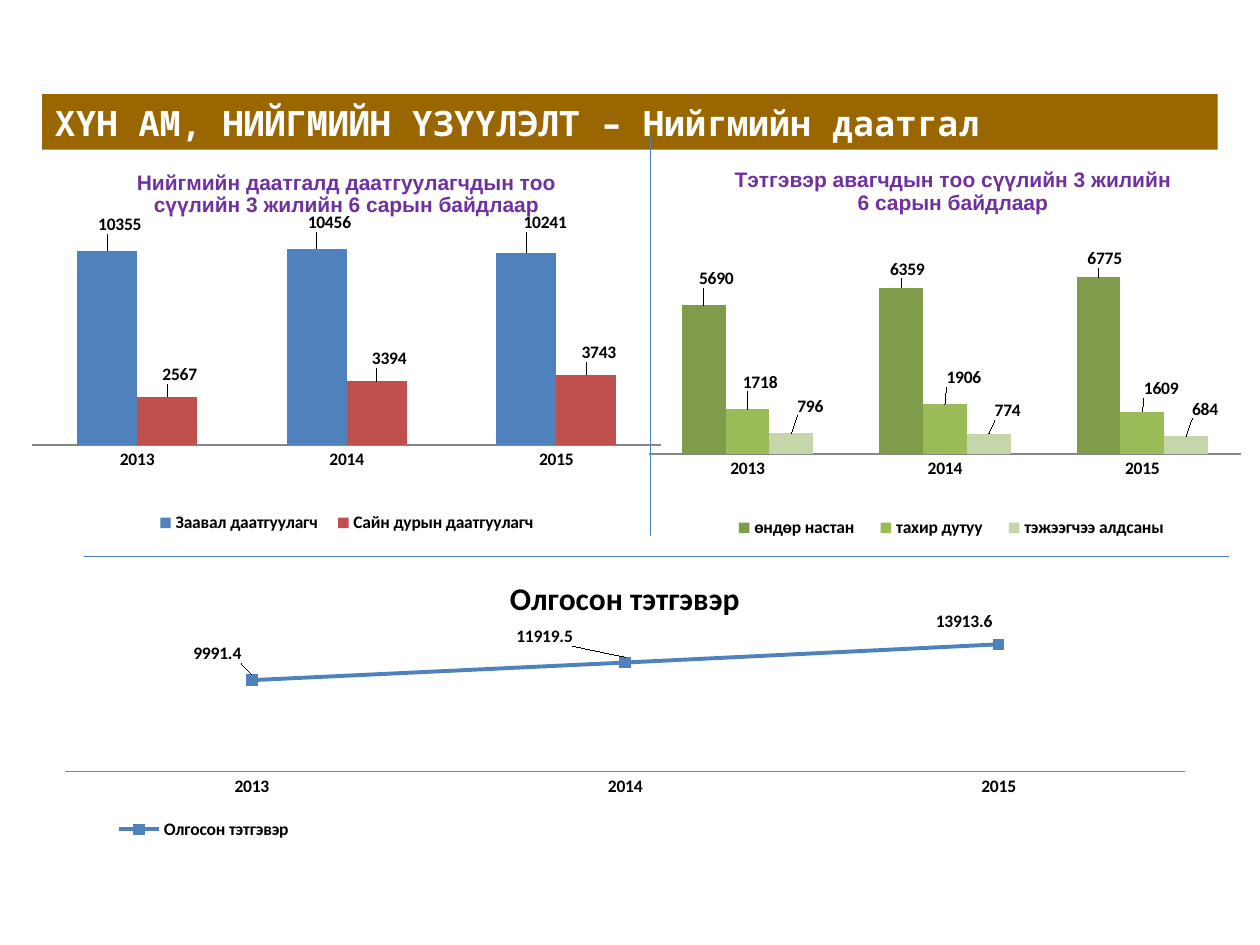
"""Build the social insurance slide with two column charts and a line chart."""
from pptx import Presentation
from pptx.chart.data import CategoryChartData
from pptx.dml.color import RGBColor
from pptx.enum.chart import XL_CHART_TYPE as ChartType
from pptx.enum.chart import XL_LABEL_POSITION as LabelPosition
from pptx.enum.chart import XL_LEGEND_POSITION as LegendPosition
from pptx.enum.chart import XL_MARKER_STYLE as MarkerStyle
from pptx.enum.chart import XL_TICK_MARK as TickMark
from pptx.enum.shapes import MSO_CONNECTOR as Connector
from pptx.enum.shapes import MSO_SHAPE as Shape
from pptx.enum.text import MSO_ANCHOR as Anchor
from pptx.enum.text import PP_ALIGN as Align
from pptx.oxml import parse_xml
from pptx.oxml.ns import nsdecls, qn
from pptx.util import Cm, Pt

BROWN = RGBColor(0x99, 0x66, 0x00)
WHITE = RGBColor(0xFF, 0xFF, 0xFF)
BLACK = RGBColor(0x00, 0x00, 0x00)
GREY = RGBColor(0x86, 0x86, 0x86)
PURPLE = RGBColor(0x70, 0x30, 0xA0)
RULE_BLUE = RGBColor(0x4B, 0x7E, 0xBC)
BLUE = RGBColor(0x4F, 0x81, 0xBD)
RED = RGBColor(0xC0, 0x50, 0x4D)
DARK_GREEN = RGBColor(0x80, 0x9B, 0x4A)
GREEN = RGBColor(0x9B, 0xBB, 0x59)
PALE_GREEN = RGBColor(0xC5, 0xD6, 0xAB)
YEARS = ["2013", "2014", "2015"]


def set_layout(element, index, values, edge=True, inner=False):
    for layout in element.findall(qn("c:layout")):
        element.remove(layout)
    target = '<c:layoutTarget val="inner"/>' if inner else ""
    modes = '<c:xMode val="edge"/><c:yMode val="edge"/>' if edge else ""
    numbers = "".join(f'<c:{name} val="{value}"/>' for name, value in zip("xywh", values))
    element.insert(index, parse_xml(
        f'<c:layout {nsdecls("c")}><c:manualLayout>{target}{modes}{numbers}'
        "</c:manualLayout></c:layout>"))


class SlideBuilder:
    def __init__(self, slide):
        self.slide = slide
        self.font = "Calibri"
        self.size = Pt(10)

    def style(self, font, size, color, name=None):
        font.name = name or self.font
        font.size = size
        font.bold = True
        font.color.rgb = color

    def banner(self, text, *box):
        shape = self.slide.shapes.add_shape(Shape.RECTANGLE, *map(Cm, box))
        shape.shadow.inherit = False
        shape.fill.solid()
        shape.fill.fore_color.rgb = BROWN
        shape.line.fill.background()
        frame = shape.text_frame
        frame.word_wrap = True
        frame.vertical_anchor = Anchor.MIDDLE
        frame.text = text
        paragraph = frame.paragraphs[0]
        paragraph.alignment = Align.JUSTIFY
        properties = paragraph._p.get_or_add_pPr()
        properties.set("marL", str(Cm(1.42)))
        properties.set("indent", str(Cm(-1.42)))
        self.style(paragraph.runs[0].font, Pt(20), WHITE, "Noto Sans Mono")

    def rule(self, *ends):
        line = self.slide.shapes.add_connector(Connector.STRAIGHT, *map(Cm, ends))
        line.line.color.rgb = RULE_BLUE
        line.line.width = Pt(0.75)
        line._element.spPr.append(parse_xml(f'<a:effectLst {nsdecls("a")}/>'))

    def chart(self, kind, box, series, maximum, plot, legend, axis_width):
        data = CategoryChartData()
        data.categories = YEARS
        for name, values, _, _ in series:
            data.add_series(name, values)
        chart = self.slide.shapes.add_chart(kind, *map(Cm, box), data).chart
        chart.font.name = self.font
        chart.font.size = self.size
        chart.font.color.rgb = BLACK
        space = chart._chartSpace
        space.find(qn("c:chart")).addnext(parse_xml(
            f'<c:spPr {nsdecls("c", "a")}><a:noFill/><a:ln><a:noFill/></a:ln></c:spPr>'))
        set_layout(next(space.iter(qn("c:plotArea"))), 0, plot, inner=True)

        chart.has_legend = True
        chart.legend.position = LegendPosition.TOP
        chart.legend.include_in_layout = False
        self.style(chart.legend.font, self.size, BLACK)
        set_layout(chart.legend._element, 1, legend)

        values_axis = chart.value_axis
        values_axis.visible = False
        values_axis.has_major_gridlines = False
        values_axis.minimum_scale = 0
        values_axis.maximum_scale = maximum
        years_axis = chart.category_axis
        years_axis.major_tick_mark = TickMark.NONE
        years_axis.format.line.color.rgb = GREY
        years_axis.format.line.width = Pt(axis_width)
        self.style(years_axis.tick_labels.font, self.size, BLACK)
        chart.plots[0].vary_by_categories = False
        for item, (_, _, color, offsets) in zip(chart.plots[0].series, series):
            self.labels(item, offsets, kind)
            if kind == ChartType.COLUMN_CLUSTERED:
                item.format.fill.solid()
                item.format.fill.fore_color.rgb = color
            else:
                self.line_series(item, color)
        return chart

    def labels(self, series, offsets, kind):
        is_column = kind == ChartType.COLUMN_CLUSTERED
        position = LabelPosition.OUTSIDE_END if is_column else LabelPosition.ABOVE
        series.data_labels.show_value = True
        series.data_labels.position = position
        self.style(series.data_labels.font, self.size, BLACK)
        for index in range(len(offsets)):
            label = series.points[index].data_label
            label.position = position
            self.style(label.font, self.size, BLACK)
        for element, offset in zip(series._element.iter(qn("c:dLbl")), offsets):
            set_layout(element, 1, offset, edge=False)

    def line_series(self, series, color):
        series.smooth = False
        series.format.line.color.rgb = color
        series.format.line.width = Pt(2.25)
        series.marker.style = MarkerStyle.SQUARE
        series.marker.size = 6
        series.marker.format.fill.solid()
        series.marker.format.fill.fore_color.rgb = color
        series.marker.format.line.color.rgb = color

    def chart_title(self, chart, text, place, size=12, color=PURPLE, font="Arial"):
        title = chart.chart_title
        title.text_frame.text = text
        for paragraph in title.text_frame.paragraphs:
            self.style(paragraph.runs[0].font, Pt(size), color, font)
        title.include_in_layout = False
        set_layout(title._element, 1, place)


def main():
    presentation = Presentation()
    presentation.slide_width = Cm(25.4)
    presentation.slide_height = Cm(19.05)
    builder = SlideBuilder(presentation.slides.add_slide(presentation.slide_layouts[6]))

    builder.banner("ХҮН АМ, НИЙГМИЙН ҮЗҮҮЛЭЛТ – Нийгмийн даатгал", 0.85, 1.9, 23.7, 1.12)
    builder.rule(13.12, 2.75, 13.12, 10.8)
    builder.rule(1.69, 11.22, 24.77, 11.22)

    insured = builder.chart(
        ChartType.COLUMN_CLUSTERED, (0.64, 3.18, 12.7, 7.83),
        [("Заавал даатгуулагч", (10355, 10456, 10241), BLUE,
          [(0.02, -0.03), (0.02, -0.03), (0.03, -0.04)]),
         ("Сайн дурын даатгуулагч", (2567, 3394, 3743), RED, [(0.02, -0.02)] * 3)],
        12000, (0, 0.16, 1, 0.58), (0.18, 0.9, 0.64, 0.08), 0.75)
    builder.chart_title(
        insured, "Нийгмийн даатгалд даатгуулагчдын тоо сүүлийн 3 жилийн 6 сарын байдлаар",
        (0.16, 0.02))

    pensioners = builder.chart(
        ChartType.COLUMN_CLUSTERED, (12.7, 2.96, 12.7, 8.26),
        [("өндөр настан", (5690, 6359, 6775), DARK_GREEN,
          [(0.02, -0.03), (0.01, -0.01), (0.01, -0.01)]),
         ("тахир дутуу", (1718, 1906, 1609), GREEN,
          [(0.02, -0.03), (0.03, -0.03), (0.03, -0.02)]),
         ("тэжээгчээ алдсаны", (796, 774, 684), PALE_GREEN,
          [(0.03, -0.03), (0.03, -0.02), (0.03, -0.03)])],
        8000, (0.03, 0.24, 0.94, 0.51), (0.14, 0.89, 0.74, 0.08), 1.5)
    builder.chart_title(
        pensioners, "Тэтгэвэр авагчдын тоо сүүлийн 3 жилийн\n6 сарын байдлаар", (0.16, 0.04))

    pensions = builder.chart(
        ChartType.LINE_MARKERS_STACKED, (0.85, 11.01, 23.28, 6.14),
        [("Олгосон тэтгэвэр", (9991.4, 11919.5, 13913.6), BLUE,
          [(-0.03, -0.02), (-0.07, -0.02), (-0.03, -0.01)])],
        16000, (0.02, 0.26, 0.97, 0.48), (0.06, 0.88, 0.16, 0.1), 0.75)
    builder.chart_title(pensions, "Олгосон тэтгэвэр", (0.4, 0.08), 18, BLACK, "Calibri")

    presentation.save("out.pptx")


if __name__ == "__main__":
    main()
